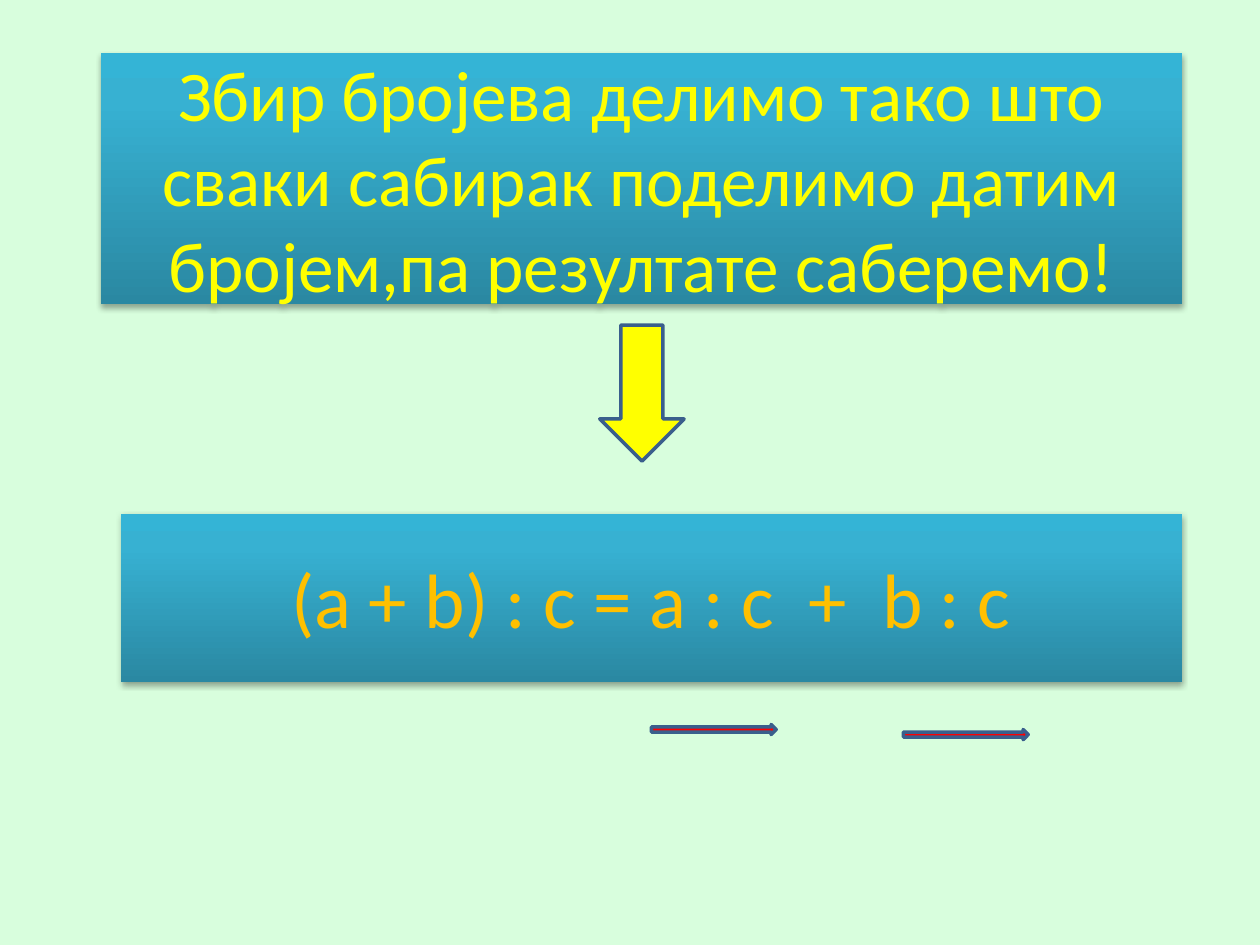
from lxml import etree
from pptx import Presentation
from pptx.dml.color import RGBColor
from pptx.enum import shapes, text
from pptx.oxml import parse_xml
from pptx.util import Inches, Pt

MINT = RGBColor(0xD8, 0xFE, 0xDD)
YELLOW = RGBColor(0xFF, 0xFF, 0x00)
AMBER = RGBColor(0xFF, 0xC0, 0x00)
RED = RGBColor(0xFF, 0x00, 0x00)
NAVY = RGBColor(0x3A, 0x5F, 0x8C)
TEALS = [(0, RGBColor(0x2A, 0x88, 0xA2)),
         (80, RGBColor(0x37, 0xB1, 0xD2)),
         (100, RGBColor(0x34, 0xB4, 0xD6))]
NS = "http://schemas.openxmlformats.org/drawingml/2006/main"
SHADE = (f'<a:effectLst xmlns:a="{NS}"><a:outerShdw blurRad="39370" '
         'dist="22860" dir="5400000" rotWithShape="0"><a:srgbClr val="000000">'
         '<a:alpha val="35000"/></a:srgbClr></a:outerShdw></a:effectLst>')


def shade(shape):
    """Give the shape an upward three-stop gradient and a soft shadow."""
    shape.fill.gradient()
    shape.fill.gradient_angle = 90
    stops = shape._element.spPr.find(f".//{{{NS}}}gsLst")
    for stop in list(stops):
        stops.remove(stop)
    for pos, color in TEALS:
        stop = etree.SubElement(stops, f"{{{NS}}}gs", pos=str(pos * 1000))
        etree.SubElement(stop, f"{{{NS}}}srgbClr", val=str(color))
    shape.line.fill.background()
    shape._element.spPr.append(parse_xml(SHADE))


def panel(slide, box, lines, size, color):
    shape = slide.shapes.add_shape(
        shapes.MSO_SHAPE.RECTANGLE, *map(Inches, box))
    shade(shape)
    frame = shape.text_frame
    frame.word_wrap = True
    frame.vertical_anchor = text.MSO_ANCHOR.MIDDLE
    for i, line in enumerate(lines):
        para = frame.add_paragraph() if i else frame.paragraphs[0]
        para.alignment = text.PP_ALIGN.CENTER
        run = para.add_run()
        run.text = line
        run.font.name = "Calibri"
        run.font.size = Pt(size)
        run.font.color.rgb = color


def arrow(slide, kind, box, color):
    shape = slide.shapes.add_shape(kind, *map(Inches, box))
    shape.shadow.inherit = False
    shape.fill.solid()
    shape.fill.fore_color.rgb = color
    shape.line.color.rgb = NAVY
    shape.line.width = Pt(2)


def main():
    deck = Presentation()
    deck.slide_width, deck.slide_height = Inches(10), Inches(7.5)
    slide = deck.slides.add_slide(deck.slide_layouts[6])
    back = slide.background.fill
    back.solid()
    back.fore_color.rgb = MINT

    panel(slide, (0.8, 0.42, 8.58, 1.99),
          ["Збир бројева делимо тако што сваки сабирак поделимо датим",
           "бројем,па резултате саберемо!"], 40.7, YELLOW)
    arrow(slide, shapes.MSO_SHAPE.DOWN_ARROW, (4.76, 2.58, 0.67, 1.08), YELLOW)
    panel(slide, (0.96, 4.08, 8.42, 1.33),
          ["(a + b) : c = a : c  +  b : c"], 44, AMBER)
    for left, top in ((5.17, 5.75), (7.17, 5.79)):
        arrow(slide, shapes.MSO_SHAPE.RIGHT_ARROW, (left, top, 0.99, 0.08), RED)
    deck.save("out.pptx")


if __name__ == "__main__":
    main()
